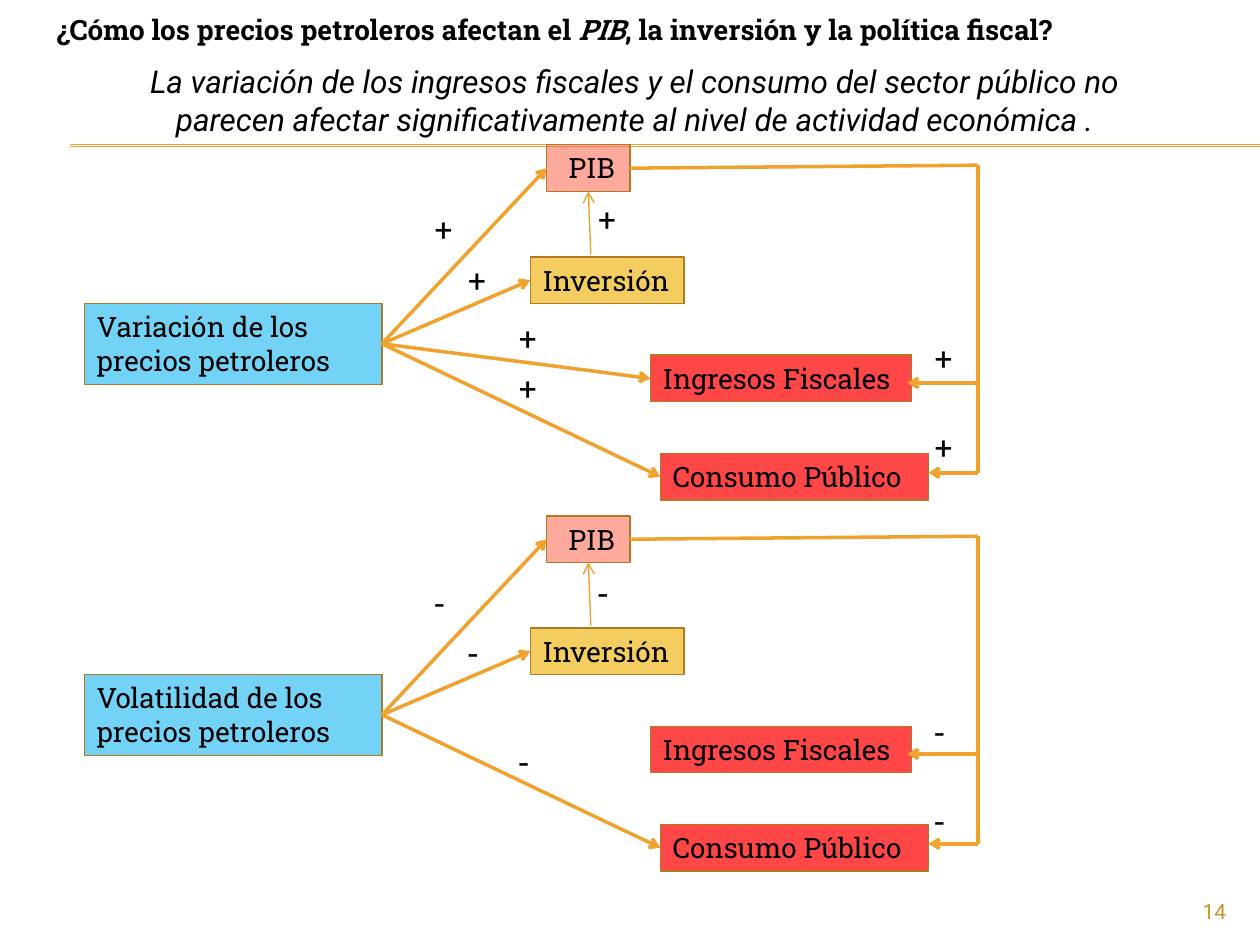
"""Build the slide on oil prices, GDP, investment and fiscal policy."""
import pptx
import pptx.util
import pptx.dml.color
import pptx.enum.shapes
import pptx.enum.text
import pptx.oxml.ns
import lxml.etree

Cm, Pt = pptx.util.Cm, pptx.util.Pt
PP_ALIGN = pptx.enum.text.PP_ALIGN
ANCHOR = pptx.enum.text.MSO_ANCHOR
AUTO_SIZE = pptx.enum.text.MSO_AUTO_SIZE
ORANGE, BORDER = "F0A22E", "B27822"
SLAB, SANS = "Roboto Slab", "Roboto"


def rgb(value):
    return pptx.dml.color.RGBColor.from_string(value)


def sub(parent, tag, **attrs):
    return lxml.etree.SubElement(parent, pptx.oxml.ns.qn(tag), attrs)


def write(sp, text, size=16, font=SLAB, color="000000", bold=False, italic=False,
          align=PP_ALIGN.LEFT, anchor=ANCHOR.TOP, wrap=True):
    """Fill a shape with one paragraph; text is a string or (string, italic) pairs."""
    tf = sp.text_frame
    tf.auto_size, tf.word_wrap, tf.vertical_anchor = AUTO_SIZE.NONE, wrap, anchor
    p = tf.paragraphs[0]
    p.alignment, p.space_before = align, Pt(0)
    for part, slanted in [(text, italic)] if isinstance(text, str) else text:
        r = p.add_run()
        r.text = part
        r.font.name, r.font.size, r.font.color.rgb = font, Pt(size), rgb(color)
        r.font.bold, r.font.italic = bold, slanted
    return p


class Deck:
    """Holds the style and the current slide."""

    def __init__(self, prs):
        self.s = prs.slides.add_slide(prs.slide_layouts[1])

    def place(self, sp, left, top, width, height):
        sp.left, sp.top, sp.width, sp.height = Cm(left), Cm(top), Cm(width), Cm(height)

    def title(self, text, box):
        sp = self.s.shapes.title
        self.place(sp, *box)
        write(sp, text, bold=True, align=PP_ALIGN.JUSTIFY, anchor=ANCHOR.MIDDLE)

    def body(self, text, box):
        sp = self.s.placeholders[1]
        self.place(sp, *box)
        p = write(sp, text, size=18, font=SANS, italic=True, align=PP_ALIGN.CENTER)
        pPr = p._p.get_or_add_pPr()
        pPr.set("marL", "0")
        pPr.set("indent", "0")
        sub(pPr, "a:buNone")

    def label(self, text, box, **style):
        sp = self.s.shapes.add_textbox(*map(Cm, box))
        write(sp, text, font=SANS, **style)

    def box(self, text, box, fill, alpha=100, **style):
        sp = self.s.shapes.add_shape(pptx.enum.shapes.MSO_SHAPE.RECTANGLE, *map(Cm, box))
        sp.shadow.inherit = False
        sp.fill.solid()
        sp.fill.fore_color.rgb = rgb(fill)
        if alpha < 100:
            color = sp._element.spPr.find(".//" + pptx.oxml.ns.qn("a:srgbClr"))
            sub(color, "a:alpha", val=str(alpha * 1000))
        sp.line.color.rgb, sp.line.width = rgb(BORDER), Pt(0.75)
        write(sp, text, **style)

    def line(self, start, end, width=2, arrow=False):
        sp = self.s.shapes.add_connector(pptx.enum.shapes.MSO_CONNECTOR.STRAIGHT,
                                         *map(Cm, (*start, *end)))
        sp.line.color.rgb, sp.line.width = rgb(ORANGE), Pt(width)
        if arrow:
            sub(sp.line._get_or_add_ln(), "a:tailEnd", type="arrow")
        sub(sp._element.spPr, "a:effectLst")


def diagram(deck, dy, cause, sign, sign_size, targets, sign_spots):
    """Draw one cause-and-effect diagram, moved down by dy."""
    hub = (7.7, 6.93 + dy)
    deck.box(cause, (1.7, 6.12 + dy, 6, 1.63), "00B0F0", 55)
    effects = {
        " PIB": (11.02, 2.92, 1.68, "FD6A51", 57, PP_ALIGN.CENTER),
        "Inversión": (10.69, 5.18, 3.1, "F3CD60", 100, PP_ALIGN.LEFT),
        "Ingresos Fiscales": (13.11, 7.16, 5.26, "FF0000", 72, PP_ALIGN.LEFT),
        "Consumo Público": (13.31, 9.14, 5.41, "FF0000", 72, PP_ALIGN.LEFT),
    }
    height = 0.94
    for name, (left, top, width, fill, alpha, align) in effects.items():
        deck.box(name, (left, top + dy, width, height), fill, alpha, align=align, wrap=False)
        if name in targets:
            deck.line(hub, (left, top + height / 2 + dy), arrow=True)
    deck.line((11.91, 5.13 + dy), (11.86, 3.86 + dy), 0.79, arrow=True)

    rail = 19.71
    deck.line((12.7, 3.39 + dy), (rail, 3.33 + dy))
    deck.line((rail, 3.33 + dy), (rail, 9.53 + dy))
    for x, y in [(18.29, 7.72), (18.72, 9.53)]:
        deck.line((rail, y + dy), (x, y + dy), arrow=True)
    for x, y in sign_spots:
        deck.label(sign, (x, y + dy, 0.89, 1.02), size=sign_size, wrap=False)


def main():
    prs = pptx.Presentation()
    prs.slide_width, prs.slide_height = Cm(25.4), Cm(19.05)
    deck = Deck(prs)
    for y in (2.92, 2.95):
        deck.line((1.42, y), (25.4, y), 0.75)

    spots = [(8.51, 4.11), (9.19, 5.13), (10.21, 7.32), (11.81, 3.91),
             (18.59, 6.71), (18.59, 8.51)]
    most = [" PIB", "Inversión", "Consumo Público"]
    diagram(deck, 0, "Variación de los precios petroleros", "+", 18,
            most + ["Ingresos Fiscales"], spots + [(10.21, 6.3)])
    diagram(deck, 7.48, "Volatilidad de los precios petroleros", "-", 20, most, spots)

    deck.title([("¿Cómo los precios petroleros afectan el ", False), ("PIB", True),
                (", la inversión y la política fiscal?", False)], (0.89, 0.13, 23.8, 0.94))
    deck.body("La variación de los ingresos fiscales y el consumo del sector público no "
              "parecen afectar significativamente al nivel de actividad económica .",
              (1.7, 1.12, 22.2, 1.8))
    deck.label("14", (22.86, 17.98, 2.11, 0.69), size=12, color="D48F29",
               align=PP_ALIGN.RIGHT)
    prs.save("out.pptx")


if __name__ == "__main__":
    main()
